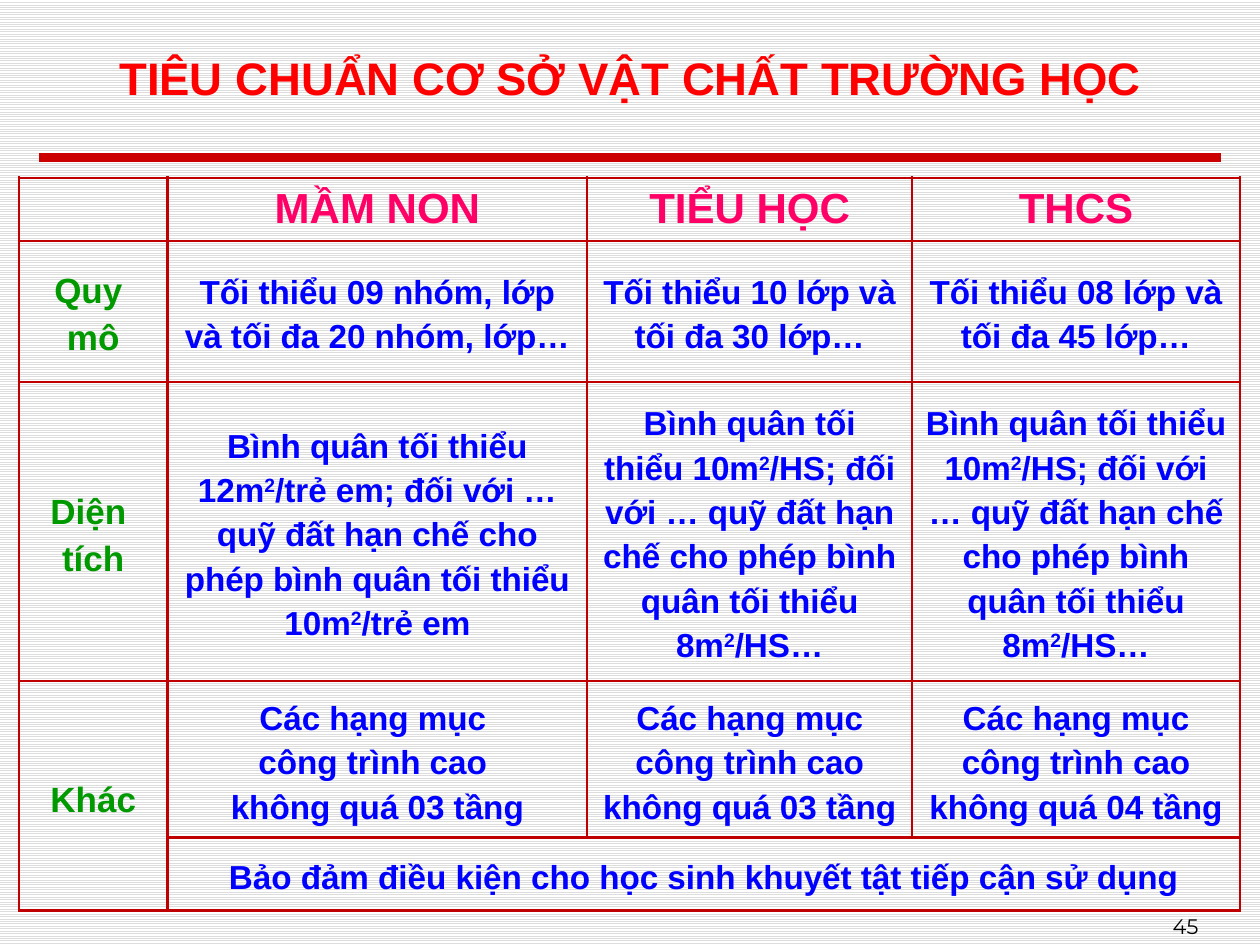
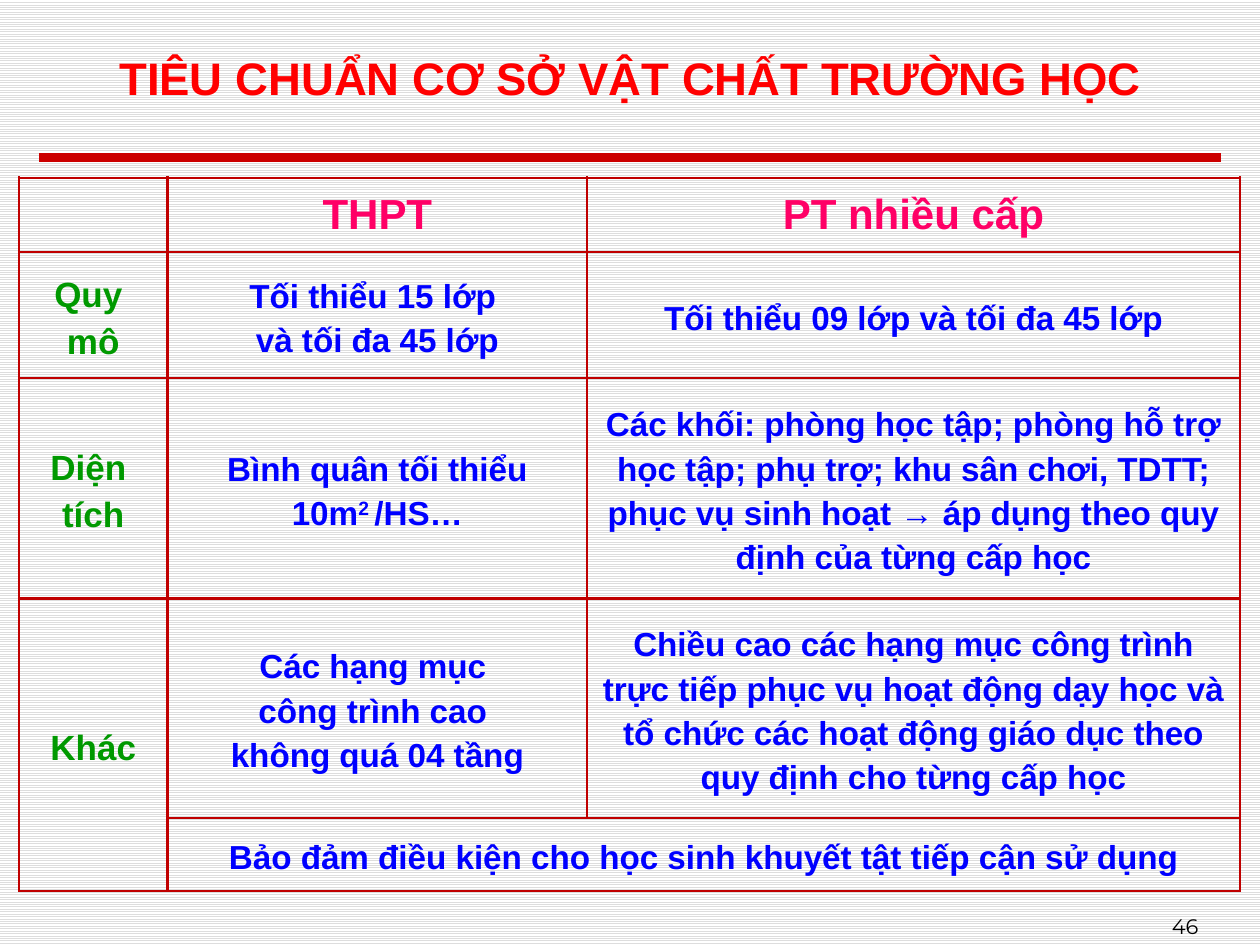
from pptx import Presentation
from pptx.dml.color import RGBColor
from pptx.enum.dml import MSO_PATTERN as Pattern
from pptx.enum.shapes import MSO_CONNECTOR as Connector
from pptx.enum.text import MSO_ANCHOR as Anchor, PP_ALIGN as Align
from pptx.oxml.ns import qn
from pptx.util import Inches, Pt
from lxml.etree import SubElement

HEADING = "TIÊU CHUẨN CƠ SỞ VẬT CHẤT TRƯỜNG HỌC"
ACCESS = "Bảo đảm điều kiện cho học sinh khuyết tật tiếp cận sử dụng"
SCHOOL_AREA = "Bình quân tối thiểu 10m^2^/HS; đối với … quỹ đất hạn chế cho phép bình quân tối thiểu 8m^2^/HS…"
BORDER = "C00000"
RED = "FF0000"
RULE_RED = "CC0000"
PINK = "FF0066"
GREEN = "009900"
BLUE = "0000FF"
BLACK = "000000"

standards = [
    {
        "page": "45",
        "columns": [0.118, 0.333, 0.258, 0.26],
        "rows": [0.5, 1.12, 1.9, 1.2, 0.58],
        "cells": [
            ["", "MẦM NON", "TIỂU HỌC", "THCS"],
            ["Quy \nmô",
             "Tối thiểu 09 nhóm, lớp và tối đa 20 nhóm, lớp…",
             "Tối thiểu 10 lớp và tối đa 30 lớp…",
             "Tối thiểu 08 lớp và tối đa 45 lớp…"],
            ["Diện \ntích",
             "Bình quân tối thiểu 12m^2^/trẻ em; đối với … quỹ đất hạn chế cho phép bình quân tối thiểu 10m^2^/trẻ em",
             SCHOOL_AREA,
             SCHOOL_AREA],
            ["Khác",
             "Các hạng mục \ncông trình cao \nkhông quá 03 tầng",
             "Các hạng mục công trình cao không quá 03 tầng",
             "Các hạng mục công trình cao không quá 04 tầng"],
            ["", ACCESS, "", ""],
        ],
    },
    {
        "page": "46",
        "columns": [0.118, 0.333, 0.518],
        "rows": [0.59, 1, 1.75, 1.74, 0.58],
        "cells": [
            ["", "THPT", "PT nhiều cấp"],
            ["Quy \nmô",
             "Tối thiểu 15 lớp \nvà tối đa 45 lớp",
             "Tối thiểu 09 lớp và tối đa 45 lớp"],
            ["Diện \ntích",
             "Bình quân tối thiểu 10m^2 ^/HS…",
             "Các khối: phòng học tập; phòng hỗ trợ học tập; phụ trợ; khu sân chơi, TDTT; phục vụ sinh hoạt → áp dụng theo quy định của từng cấp học"],
            ["Khác",
             "Các hạng mục \ncông trình cao \nkhông quá 04 tầng",
             "Chiều cao các hạng mục công trình trực tiếp phục vụ hoạt động dạy học và tổ chức các hoạt động giáo dục theo quy định cho từng cấp học"],
            ["", ACCESS, ""],
        ],
    },
]


def color(value):
    return RGBColor.from_string(value)


def write(frame, text, size, tint, font="Arial", bold=True, align=Align.CENTER, spacing=None):
    paragraph = frame.paragraphs[0]
    plain, *pieces = text.split("^")
    paragraph.text = plain
    for piece in pieces:
        paragraph.add_run().text = piece
    paragraph.alignment = align
    paragraph.line_spacing = spacing
    for run in paragraph.runs:
        run.font.name = font
        run.font.size = Pt(size)
        run.font.bold = bold
        run.font.color.rgb = color(tint)
    if pieces:
        for raised in paragraph.runs[1::2]:
            raised.font._element.set("baseline", "30000")
    return paragraph


deck = Presentation()
deck.slide_width = W = Inches(10)
deck.slide_height = H = Inches(7.5)

for standard in standards:
    slide = deck.slides.add_slide(deck.slide_layouts[6])
    paper = slide.background.fill
    paper.patterned()
    paper.pattern = Pattern.LIGHT_HORIZONTAL
    paper.fore_color.rgb = color("DDDDDD")
    paper.back_color.rgb = color("FFFFFF")

    rule_y = int(H / 6)
    rule = slide.shapes.add_connector(
        Connector.STRAIGHT, int(W * 0.031), rule_y, int(W * 0.969), rule_y)
    rule.line.color.rgb = color(RULE_RED)
    rule.line.width = Pt(5)
    SubElement(rule._element.spPr, qn("a:effectLst"))

    page = slide.shapes.add_textbox(Inches(7.46), Inches(7.17), Inches(2.15), Inches(0.33)).text_frame
    page.word_wrap = True
    page.vertical_anchor = Anchor.BOTTOM
    write(page, standard["page"], 12, BLACK, "Montserrat", False, Align.RIGHT)

    title = slide.shapes.add_textbox(Inches(0.26), Inches(0.17), Inches(9.49), Inches(0.83)).text_frame
    title.word_wrap = True
    title.vertical_anchor = Anchor.MIDDLE
    write(title, HEADING, 26, RED, spacing=1.14).space_before = Pt(12)

    cells, columns, rows = standard["cells"], standard["columns"], standard["rows"]
    grid = slide.shapes.add_table(
        len(rows), len(columns), Inches(0.15), Inches(1.41),
        int(W * sum(columns)), Inches(sum(rows))).table
    grid.first_row = grid.horz_banding = False
    for column, share in zip(grid.columns, columns):
        column.width = int(W * share)
    for row, height in zip(grid.rows, rows):
        row.height = Inches(height)

    for r, texts in enumerate(cells):
        for c, text in enumerate(texts):
            cell = grid.cell(r, c)
            cell.vertical_anchor = Anchor.MIDDLE
            for side in ("lnL", "lnR", "lnT", "lnB"):
                edge = SubElement(cell._tc.get_or_add_tcPr(), qn(f"a:{side}"), w=str(Pt(1.5)))
                SubElement(SubElement(edge, qn("a:solidFill")), qn("a:srgbClr"), val=BORDER)
            cell.fill.background()
            if not text:
                continue
            if r == 0:
                write(cell.text_frame, text, 24, PINK)
            elif c == 0:
                write(cell.text_frame, text, 20, GREEN, spacing=1.2)
            else:
                write(cell.text_frame, text, 19, BLUE, spacing=1.2)

    grid.cell(3, 0).merge(grid.cell(4, 0))
    grid.cell(4, 1).merge(grid.cell(4, len(columns) - 1))

deck.save("out.pptx")
